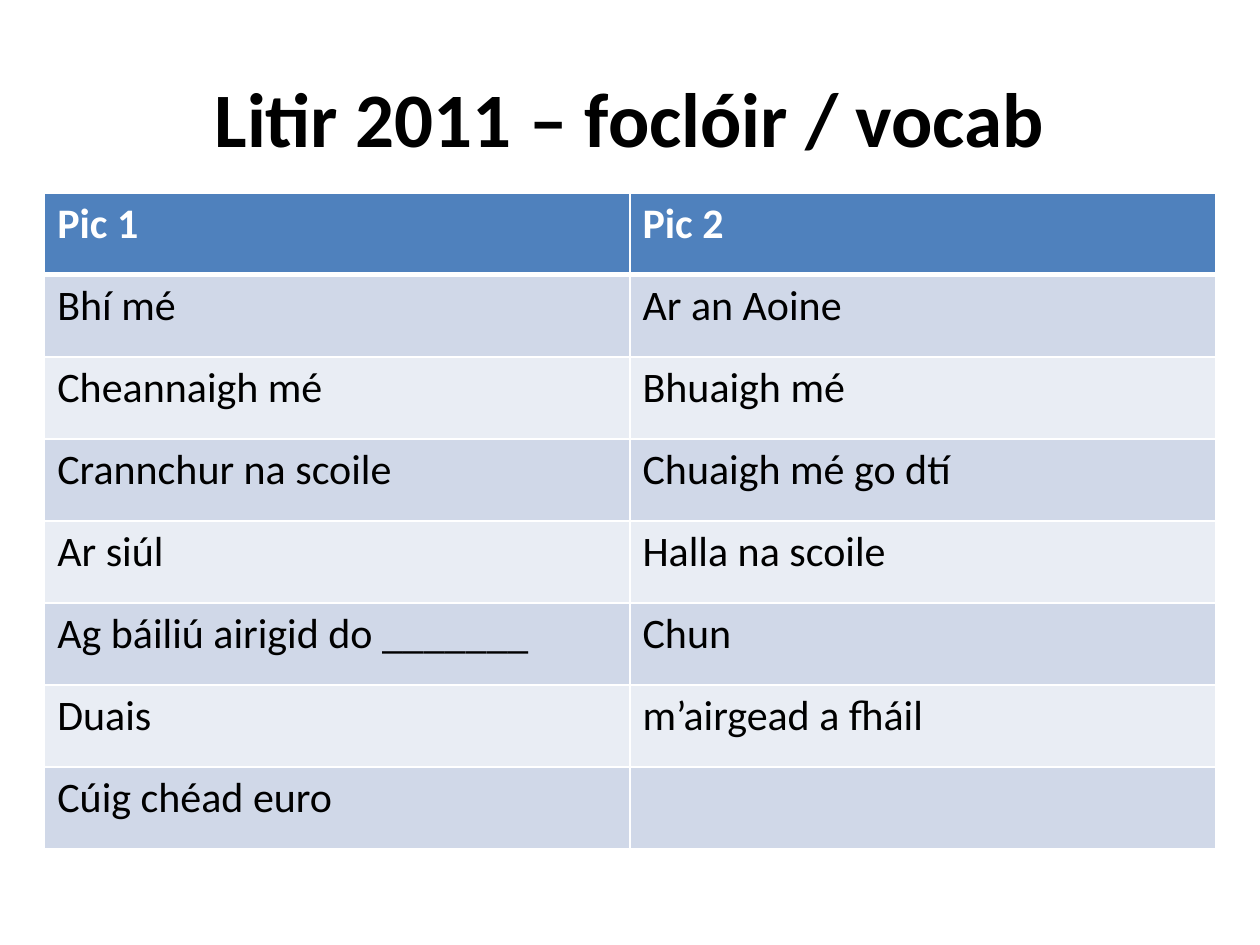
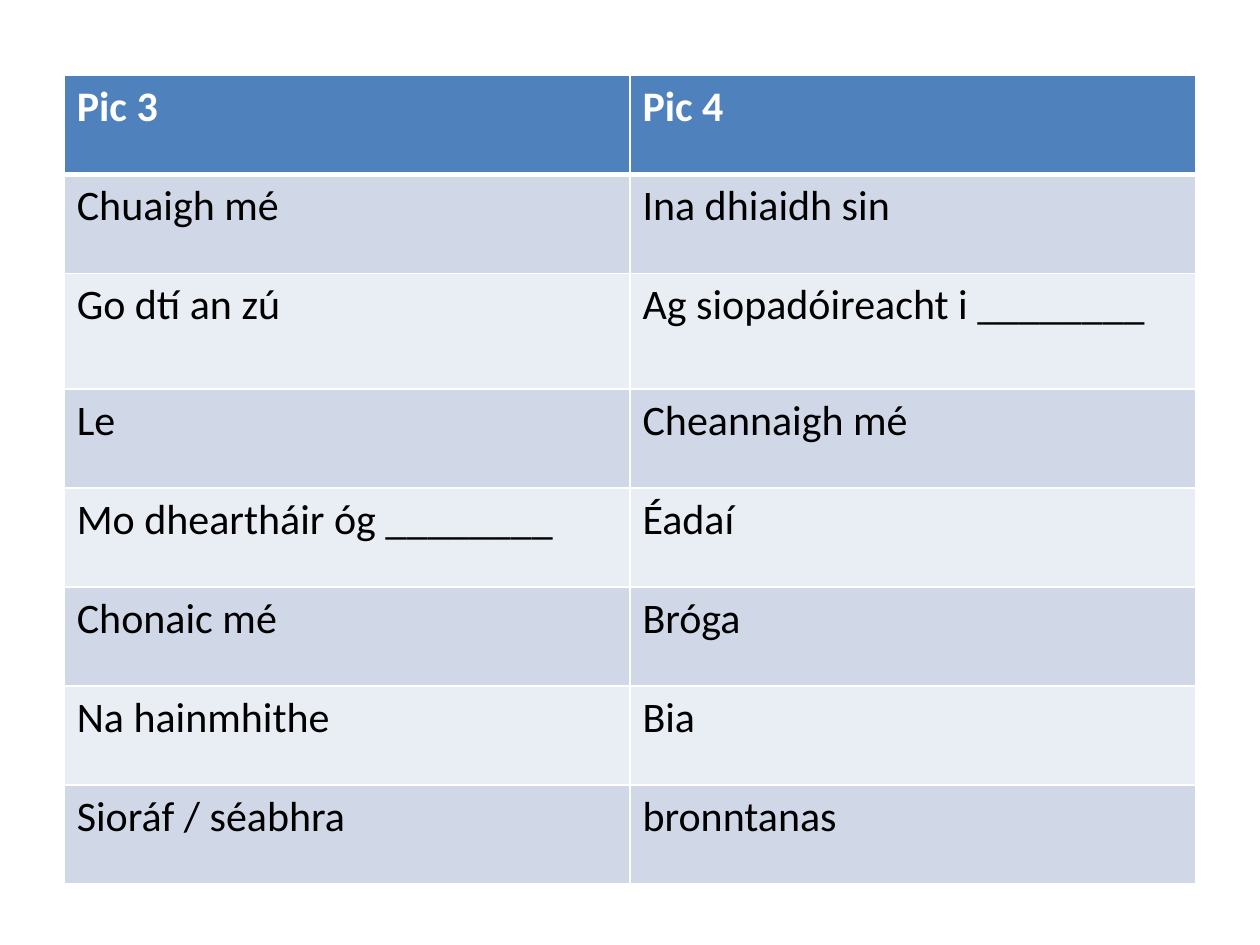
from dataclasses import dataclass

from lxml import etree
from pptx import Presentation
from pptx.dml.color import RGBColor
from pptx.enum.text import MSO_ANCHOR, PP_ALIGN
from pptx.oxml.ns import qn
from pptx.util import Inches, Pt

CENTER, LEFT = PP_ALIGN.CENTER, PP_ALIGN.LEFT
MIDDLE, TOP = MSO_ANCHOR.MIDDLE, MSO_ANCHOR.TOP
WIDE, HIGH = 10, 7.5
COLS, ROWS = 100, 75


@dataclass(frozen=True)
class Theme:
    font: str = "Calibri"
    ink: str = "000000"
    paper: str = "FFFFFF"
    head: str = "4F81BD"
    bands: tuple = ("E9EDF4", "D0D8E8")
    title: int = 44
    body: int = 24
    thin: int = 1
    thick: int = 3


def span(cols):
    return Inches(cols * WIDE / COLS)


def drop(rows):
    return Inches(rows * HIGH / ROWS)


def apply(target, values):
    for name, value in values.items():
        setattr(target, name, value)


class Deck:
    def __init__(self, theme):
        self.theme = theme
        self.show = Presentation()
        apply(self.show, {"slide_width": span(COLS), "slide_height": drop(ROWS)})
        self.slide = None

    def page(self):
        self.slide = self.show.slides.add_slide(self.show.slide_layouts[6])
        fill = self.slide.background.fill
        fill.solid()
        fill.fore_color.rgb = RGBColor.from_string(self.theme.paper)

    def label(self, frame, text, size, color, bold=False, align=LEFT):
        para = frame.paragraphs[0]
        para.alignment = align
        run = para.add_run()
        run.text = text
        apply(run.font, {"name": self.theme.font, "size": Pt(size), "bold": bold})
        run.font.color.rgb = RGBColor.from_string(color)

    def title(self, text, x, y, w, h):
        box = self.slide.shapes.add_textbox(span(x), drop(y), span(w), drop(h))
        apply(box.text_frame, {"word_wrap": True, "vertical_anchor": MIDDLE})
        self.label(box.text_frame, text, self.theme.title, self.theme.ink,
                   True, CENTER)

    def edges(self, cell, row):
        """Rule all four sides, with a heavy line below the header row."""
        heavy = {(0, "B"), (1, "T")}
        props = cell._tc.get_or_add_tcPr()
        for spot, side in enumerate("LRTB"):
            width = self.theme.thick if (row, side) in heavy else self.theme.thin
            line = etree.Element(qn(f"a:ln{side}"), w=str(Pt(width)))
            fill = etree.SubElement(line, qn("a:solidFill"))
            etree.SubElement(fill, qn("a:srgbClr"), val=self.theme.paper)
            props.insert(spot, line)

    def table(self, pairs, x, y, w, tall, extra=None):
        """Draw word pairs; extra maps a row number to its own height."""
        heights = [(extra or {}).get(row, tall) for row in range(len(pairs))]
        size = len(pairs), len(pairs[0])
        grid = self.slide.shapes.add_table(
            *size, span(x), drop(y), span(w), drop(sum(heights))).table
        for col in grid.columns:
            col.width = span(w / size[1])
        for row, (words, height) in enumerate(zip(pairs, heights)):
            grid.rows[row].height = drop(height)
            for col, word in enumerate(words):
                self.cell(grid.cell(row, col), row, word)

    def cell(self, cell, row, word):
        theme, head = self.theme, row == 0
        cell.vertical_anchor = TOP
        cell.fill.solid()
        shade = theme.head if head else theme.bands[row % 2]
        cell.fill.fore_color.rgb = RGBColor.from_string(shade)
        self.edges(cell, row)
        if word:
            self.label(cell.text_frame, word, theme.body,
                       theme.paper if head else theme.ink, head)


FIRST = [
    ("Pic 1", "Pic 2"),
    ("Bhí mé", "Ar an Aoine"),
    ("Cheannaigh mé", "Bhuaigh mé"),
    ("Crannchur na scoile", "Chuaigh mé go dtí"),
    ("Ar siúl", "Halla na scoile"),
    ("Ag báiliú airigid do _______", "Chun"),
    ("Duais", "m’airgead a fháil"),
    ("Cúig chéad euro", ""),
]
SECOND = [
    ("Pic 3", "Pic 4"),
    ("Chuaigh mé", "Ina dhiaidh sin"),
    ("Go dtí an zú", "Ag siopadóireacht i ________"),
    ("Le", "Cheannaigh mé"),
    ("Mo dheartháir óg ________", "Éadaí"),
    ("Chonaic mé", "Bróga"),
    ("Na hainmhithe", "Bia"),
    ("Sioráf / séabhra", "bronntanas"),
]


def main():
    deck = Deck(Theme())
    deck.page()
    deck.title("Litir 2011 – foclóir / vocab", 5, 3, 90, 12.5)
    deck.table(FIRST, 3.55, 15.3, 92.9, 6.51)
    deck.page()
    deck.table(SECOND, 5.1, 6, 89.8, 7.86, {2: 9.15})
    deck.show.save("out.pptx")


if __name__ == "__main__":
    main()
